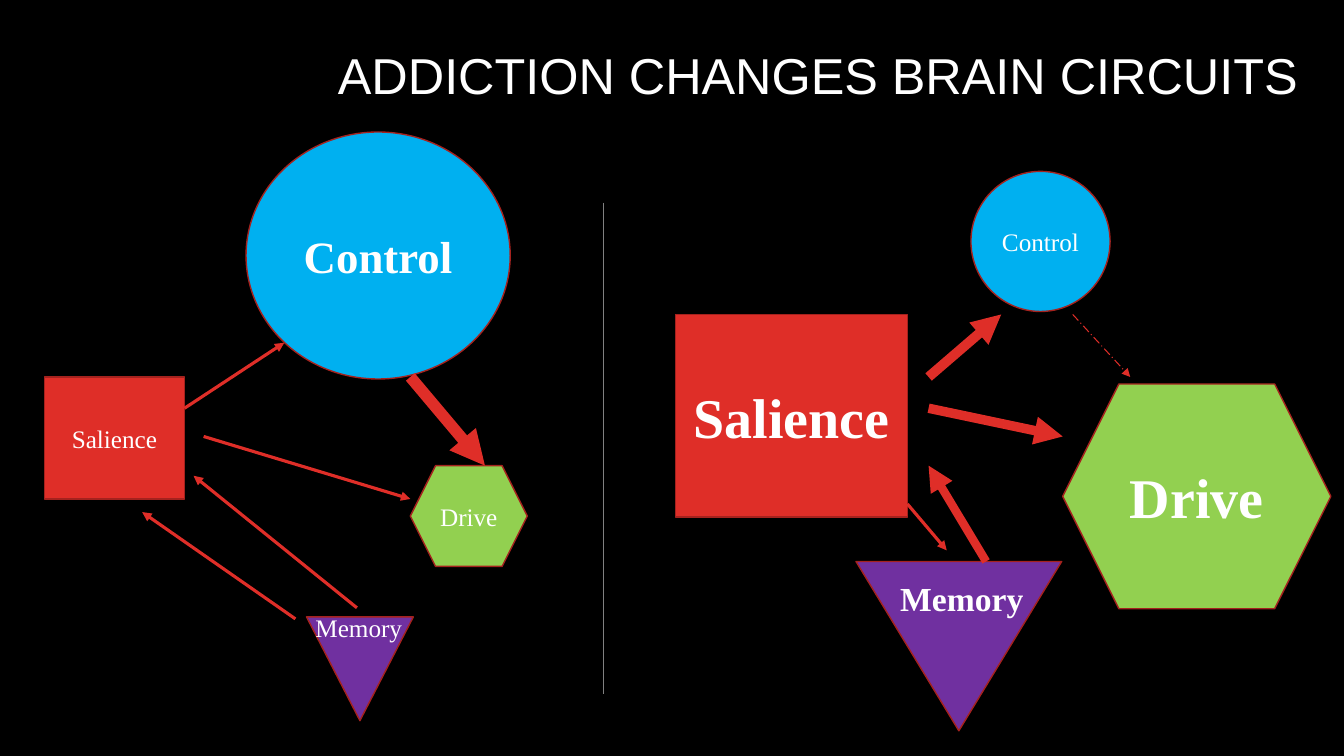
from lxml import etree
from pptx import Presentation
from pptx.dml.color import RGBColor
from pptx.enum import dml, shapes, text
from pptx.oxml.ns import qn
from pptx.util import Inches, Pt

BLACK = RGBColor(0x00, 0x00, 0x00)
WHITE = RGBColor(0xFF, 0xFF, 0xFF)
GRAY = RGBColor(0x80, 0x80, 0x80)
RED = RGBColor(0xDF, 0x2E, 0x28)
DARK_RED = RGBColor(0xA5, 0x22, 0x1E)
BLUE = RGBColor(0x00, 0xB0, 0xF0)
GREEN = RGBColor(0x92, 0xD0, 0x50)
PURPLE = RGBColor(0x70, 0x30, 0xA0)

KIND = shapes.MSO_SHAPE
# label, preset, fill, box, text size, bold
REGIONS = [
    ("Control", KIND.OVAL, BLUE, (2.44, 1.31, 2.62, 2.45), 32, True),
    ("Control", KIND.OVAL, BLUE, (9.63, 1.7, 1.38, 1.39), 18, False),
    ("Salience", KIND.RECTANGLE, RED, (0.44, 3.74, 1.39, 1.21), 18, False),
    ("Salience", KIND.RECTANGLE, RED, (6.7, 3.12, 2.3, 2.01), 40, True),
    ("Drive", KIND.HEXAGON, GREEN, (4.07, 4.62, 1.16, 1), 18, False),
    ("Drive", KIND.HEXAGON, GREEN, (10.54, 3.81, 2.66, 2.23), 40, True),
    ("", KIND.FLOWCHART_MERGE, PURPLE, (3.04, 6.12, 1.06, 1.03), 18, False),
    ("", KIND.FLOWCHART_MERGE, PURPLE, (8.49, 5.57, 2.04, 1.68), 24, True),
]
MEMORY_LABELS = [
    ((3.03, 6.03, 1.14, 0.4), 18, False),
    ((8.83, 5.68, 1.58, 0.5), 24, True),
]
# start, end, width
ARROWS = [
    ((4.07, 3.74), (4.81, 4.62), 8.25),
    ((3.54, 6.03), (1.92, 4.72), 2.25),
    ((9.78, 5.57), (9.21, 4.62), 6),
    ((1.83, 4.05), (2.82, 3.4), 2.25),
    ((9.21, 3.74), (9.93, 3.12), 7),
    ((9.21, 4.05), (10.54, 4.33), 6.75),
    ((9, 5), (9.39, 5.46), 2.25),
    ((2.02, 4.33), (4.07, 4.95), 2.25),
    ((2.93, 6.14), (1.41, 5.08), 2.25),
]


class CircuitSlide:
    heading_font = "Arial"
    label_font = "Times New Roman"

    def __init__(self, deck):
        self.slide = deck.slides.add_slide(deck.slide_layouts[5])
        background = self.slide.background.fill
        background.solid()
        background.fore_color.rgb = BLACK

    def set_words(self, frame, words, font_name, size, bold, align):
        frame.word_wrap = True
        frame.text = words
        paragraph = frame.paragraphs[0]
        paragraph.alignment = align
        font = paragraph.font
        font.name, font.size, font.bold = font_name, Pt(size), bold
        font.color.rgb = WHITE
        return paragraph

    def title(self, words, box):
        heading = self.slide.shapes.title
        heading.left, heading.top, heading.width, heading.height = map(Inches, box)
        frame = heading.text_frame
        frame.auto_size = text.MSO_AUTO_SIZE.NONE
        frame.vertical_anchor = text.MSO_ANCHOR.MIDDLE
        paragraph = self.set_words(frame, words, self.heading_font, 36, False,
                                   text.PP_ALIGN.RIGHT)
        paragraph.line_spacing = 0.9

    def region(self, label, preset, color, box, size, bold):
        region = self.slide.shapes.add_shape(preset, *map(Inches, box))
        region.shadow.inherit = False
        region.fill.solid()
        region.fill.fore_color.rgb = color
        region.line.color.rgb = DARK_RED
        region.line.width = Pt(1)
        if label:
            frame = region.text_frame
            frame.margin_left = frame.margin_right = Inches(0.05)
            frame.vertical_anchor = text.MSO_ANCHOR.MIDDLE
            self.set_words(frame, label, self.label_font, size, bold,
                           text.PP_ALIGN.CENTER)

    def label(self, words, box, size, bold):
        frame = self.slide.shapes.add_textbox(*map(Inches, box)).text_frame
        self.set_words(frame, words, self.label_font, size, bold,
                       text.PP_ALIGN.LEFT)
        frame.auto_size = text.MSO_AUTO_SIZE.SHAPE_TO_FIT_TEXT

    def line(self, start, end, width, color=RED):
        link = self.slide.shapes.add_connector(
            shapes.MSO_CONNECTOR.STRAIGHT, *map(Inches, start + end))
        link.line.color.rgb = color
        link.line.width = Pt(width)
        etree.SubElement(link._element.spPr, qn("a:effectLst"))
        return link

    def arrow(self, start, end, width, dash=None):
        link = self.line(start, end, width)
        if dash:
            link.line.dash_style = dash
        outline = link._element.spPr.find(qn("a:ln"))
        etree.SubElement(outline, qn("a:tailEnd"), type="triangle")


def main():
    deck = Presentation()
    deck.slide_width, deck.slide_height = Inches(13.33), Inches(7.5)
    circuits = CircuitSlide(deck)
    circuits.title("ADDICTION CHANGES BRAIN CIRCUITS", (2.98, 0.21, 10, 1.13))
    for region in REGIONS:
        circuits.region(*region)
    for memory in MEMORY_LABELS:
        circuits.label("Memory", *memory)
    circuits.line((5.99, 2.01), (5.99, 6.89), 0.75, GRAY)
    for arrow in ARROWS:
        circuits.arrow(*arrow)
    circuits.arrow((10.64, 3.12), (11.21, 3.74), 0.75,
                   dml.MSO_LINE.LONG_DASH_DOT)
    deck.save("out.pptx")


if __name__ == "__main__":
    main()
